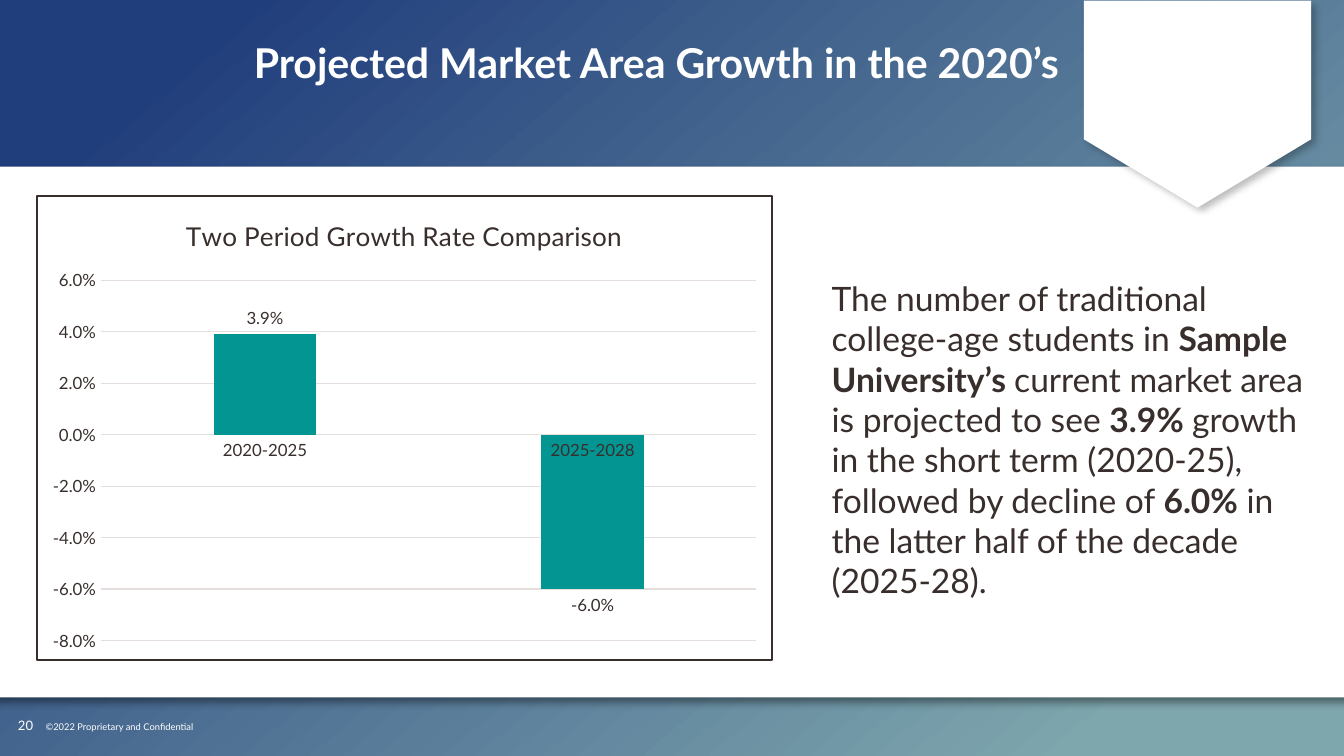
from lxml.etree import SubElement as Sub
from pptx import Presentation
from pptx.chart.data import CategoryChartData as Data
from pptx.dml.color import RGBColor as Rgb
from pptx.enum.chart import XL_CHART_TYPE as Kind, XL_LABEL_POSITION as Spot, XL_TICK_MARK as Tick
from pptx.enum.shapes import MSO_SHAPE as Form
from pptx.enum.text import MSO_ANCHOR as Anchor, MSO_AUTO_SIZE as Auto, PP_ALIGN as Align
from pptx.oxml import parse_xml
from pptx.oxml.ns import nsdecls, qn
from pptx.util import Inches, Pt

WIDE = Inches(10)
HIGH = WIDE * 9 // 16
FACE = "Lato"
INK, WHITE, GRID = "382F2C", "FFFFFF", "E4DEDD"
NAVY, SAGE, TEAL = "213E7C", "7EA6AD", "029592"


def tint(code):
    return Rgb.from_string(code)


def area(x, y, w, h):
    return [int(side * share / 100) for side, share in zip((WIDE, HIGH, WIDE, HIGH), (x, y, w, h))]


def style(font, size, color, bold=False):
    font.name, font.size, font.bold = FACE, Pt(size), bold
    font.color.rgb = tint(color)


def write(box, *parts, size, color=WHITE, bold=False, align=Align.LEFT,
          anchor=Anchor.TOP, inset=(0.1, 0.05), after=0, indent=0):
    frame = box.text_frame
    frame.word_wrap, frame.auto_size = True, Auto.NONE
    frame.vertical_anchor = anchor
    frame.margin_left = frame.margin_right = Inches(inset[0])
    frame.margin_top = frame.margin_bottom = Inches(inset[1])
    para = frame.paragraphs[0]
    para.alignment, para.space_after = align, Pt(after)
    para._p.get_or_add_pPr().set("marL", str(Inches(indent)))
    for turn, part in enumerate(parts):
        run = para.add_run()
        run.text = part
        style(run.font, size, color, bold or turn % 2 == 1)


def label(slide, spot, *parts, **form):
    write(slide.shapes.add_textbox(*area(*spot)), *parts, **form)


def block(slide, form, spot, shade=None, angle=90):
    shape = slide.shapes.add_shape(form, *area(*spot))
    shape.fill.solid()
    shape.fill.fore_color.rgb = tint(WHITE)
    shape.line.fill.background()
    shape.shadow.inherit = False
    if shade:
        glow = Sub(shape._element.spPr.find(qn("a:effectLst")), qn("a:outerShdw"),
                   blurRad=str(Pt(4)), dist=str(Pt(3)), dir=str(angle * 60000), rotWithShape="0")
        ink = Sub(glow, qn("a:srgbClr"), val="000000")
        Sub(ink, qn("a:alpha"), val=str(shade * 1000))
    return shape


def blend(shape):
    fill = shape.fill
    fill.gradient()
    fill.gradient_angle = 310
    for stop, (place, color) in zip(fill.gradient_stops, ((0.11, NAVY), (0.88, SAGE))):
        stop.position, stop.color.rgb = place, tint(color)


def frame(chart):
    space = chart._chartSpace
    space.find(qn("c:chart")).addnext(parse_xml(
        f'<c:spPr {nsdecls("c", "a")}><a:solidFill><a:srgbClr val="{WHITE}"/></a:solidFill>'
        f'<a:ln w="{Pt(1)}"><a:solidFill><a:srgbClr val="{INK}"/></a:solidFill></a:ln></c:spPr>'))
    plot = space.find(".//" + qn("c:plotArea"))
    for old in plot.findall(qn("c:layout")):
        plot.remove(old)
    modes = '<c:layoutTarget val="inner"/><c:xMode val="edge"/><c:yMode val="edge"/>'
    sides = "".join(f'<c:{tag} val="{share / 100}"/>'
                    for tag, share in zip("xywh", (8.7, 18.2, 89.2, 77.6)))
    plot.insert(0, parse_xml(
        f'<c:layout {nsdecls("c")}><c:manualLayout>{modes}{sides}</c:manualLayout></c:layout>'))


def rule(line):
    line.color.rgb, line.width = tint(GRID), Pt(0.75)


def graph(slide, spot):
    data = Data(number_format="0.0%")
    data.categories = ["2020-2025", "2025-2028"]
    data.add_series("Series 1", [0.039, -0.06])
    chart = slide.shapes.add_chart(Kind.COLUMN_CLUSTERED, *area(*spot), data).chart
    style(chart.font, 10, INK)
    chart.has_legend = False
    chart.has_title = True
    text = chart.chart_title.text_frame
    text.text = "Two Period Growth Rate Comparison"
    style(text.paragraphs[0].runs[0].font, 14, INK)
    chart.chart_title.include_in_layout = False

    for axis in (chart.category_axis, chart.value_axis):
        axis.major_tick_mark = axis.minor_tick_mark = Tick.NONE
        style(axis.tick_labels.font, 9, INK)
    rule(chart.category_axis.format.line)
    scale = chart.value_axis
    scale.minimum_scale, scale.maximum_scale, scale.major_unit = -0.08, 0.06, 0.02
    scale.format.line.fill.background()
    rule(scale.major_gridlines.format.line)
    scale.tick_labels.number_format = "0.0%"
    scale.tick_labels.number_format_is_linked = False

    plot = chart.plots[0]
    plot.gap_width, plot.overlap, plot.vary_by_categories = 219, -27, False
    bars = plot.series[0]
    bars.invert_if_negative = False
    bars.format.fill.solid()
    bars.format.fill.fore_color.rgb = tint(TEAL)
    tags = bars.data_labels
    tags.show_value, tags.position = True, Spot.OUTSIDE_END
    tags.number_format, tags.number_format_is_linked = "0.0%", False
    style(tags.font, 9, INK)
    frame(chart)


def head(slide, spot, text):
    title = slide.shapes.title
    title.left, title.top, title.width, title.height = area(*spot)
    write(title, text, size=22, bold=True, align=Align.CENTER)
    slide.shapes._spTree.append(title._element)


def main():
    deck = Presentation()
    deck.slide_width, deck.slide_height = WIDE, HIGH
    slide = deck.slides.add_slide(deck.slide_layouts[5])

    blend(block(slide, Form.RECTANGLE, (-0.1, 0, 100.1, 100)))
    block(slide, Form.RECTANGLE, (-0.9, 22.04, 101.7, 70.22), shade=40)
    badge = block(slide, Form.PENTAGON, (81.4, -1.24, 15.4, 30.04), shade=26, angle=45)
    badge.rotation, badge.adjustments[0] = 90, 0.33

    label(slide, (2.4, 94.58, 19.8, 3.38), "©2022 Proprietary and Confidential", size=5)
    label(slide, (-0.3, 94.58, 4.4, 2.84), "20", size=7, align=Align.CENTER,
          anchor=Anchor.MIDDLE, inset=(0.07, 0.04))
    head(slide, (14.7, 4.09, 68.3, 7.64), "Projected Market Area Growth in the 2020’s")
    label(slide, (60.8, 35.91, 37.3, 45.87),
          "The number of traditional college-age students in ", "Sample University’s ",
          "current market area is projected to see ", "3.9% ",
          "growth in the short term (2020-25), followed by decline of ", "6.0%",
          " in the latter half of the decade (2025-28).",
          size=18, color=INK, after=6, indent=0.01)
    graph(slide, (2.7, 25.78, 54.8, 61.69))
    deck.save("out.pptx")


if __name__ == "__main__":
    main()
